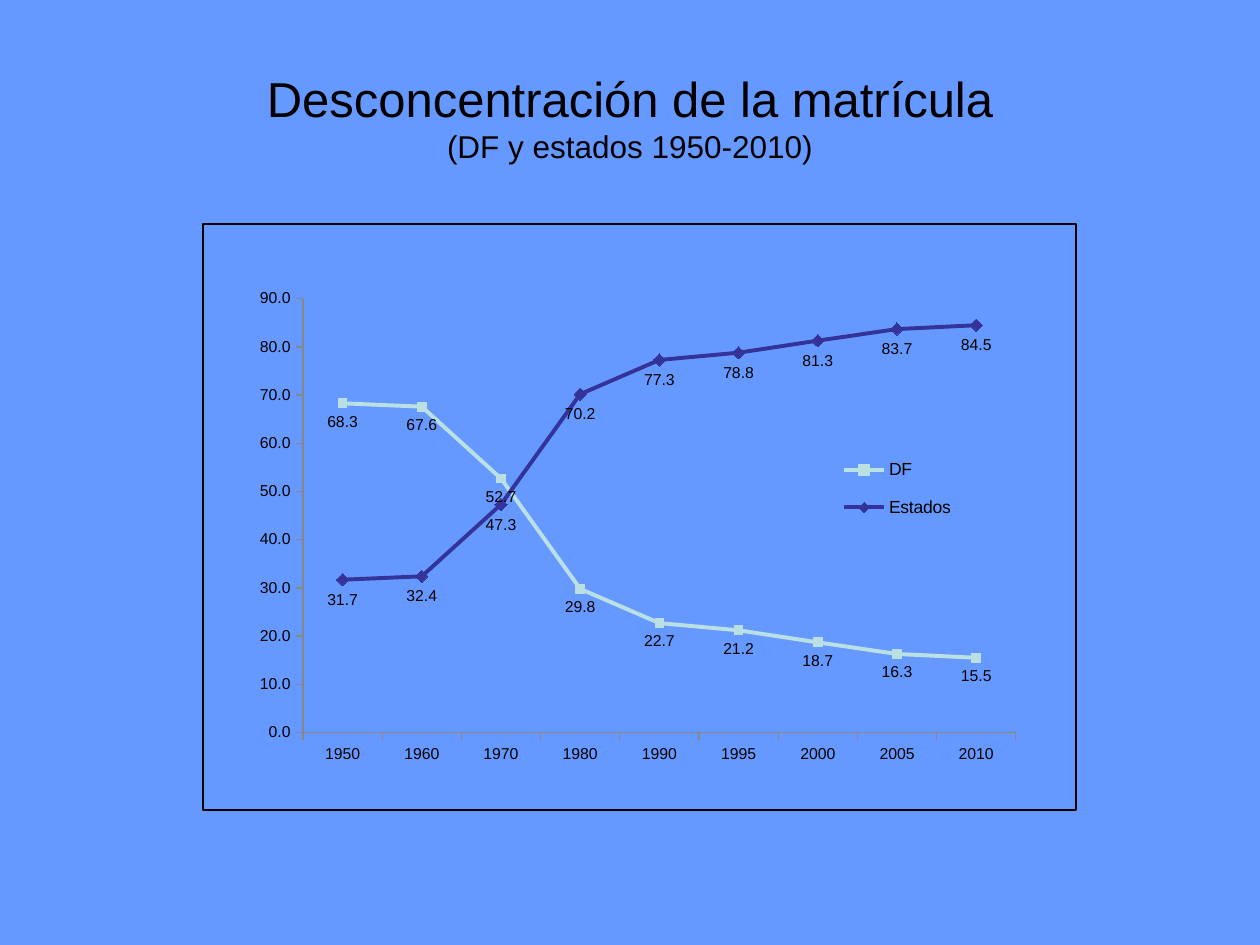
from dataclasses import dataclass
from typing import Any

from lxml import etree
from pptx import Presentation
from pptx import util as u
from pptx.chart import data as chart_data
from pptx.dml import color
from pptx.enum import chart as ch
from pptx.enum import shapes, text
from pptx.oxml import ns


@dataclass(frozen=True)
class Theme:
    background: str = "6699FF"
    ink: str = "000000"
    axis: str = "878787"
    font: str = "Arial"
    title: float = 28
    subtitle: float = 18
    legend: float = 10
    label: float = 9


@dataclass(frozen=True)
class Box:
    left: float
    top: float
    width: float
    height: float

    def lengths(self) -> list[u.Length]:
        return [u.Inches(v) for v in (self.left, self.top, self.width, self.height)]


@dataclass(frozen=True)
class Enrolment:
    name: str
    values: tuple[float, ...]
    color: str
    marker: Any
    marker_size: int


THEME = Theme()
TITLE_BOX = Box(0.5, 0.3, 9, 1.25)
FRAME_BOX = Box(1.61, 1.78, 6.93, 4.65)
CHART_BOX = Box(1.77, 1.62, 6.61, 4.61)
PLOT_AREA = Box(0.096, 0.163, 0.856, 0.747)
LEGEND_AREA = Box(0.72, 0.41, 0.18, 0.16)
YEARS = ("1950", "1960", "1970", "1980", "1990", "1995", "2000", "2005", "2010")
ENROLMENTS = (
    Enrolment("DF", (68.3, 67.6, 52.7, 29.8, 22.7, 21.2, 18.7, 16.3, 15.5),
              "BBE0E3", ch.XL_MARKER_STYLE.SQUARE, 5),
    Enrolment("Estados", (31.7, 32.4, 47.3, 70.2, 77.3, 78.8, 81.3, 83.7, 84.5),
              "333399", ch.XL_MARKER_STYLE.DIAMOND, 7),
)


def rgb(value: str) -> color.RGBColor:
    return color.RGBColor.from_string(value)


def apply_format(target: Any, values: dict[str, Any]) -> None:
    for name, value in values.items():
        setattr(target, name, value)


def style_font(font: Any, size: float) -> None:
    apply_format(font, {"name": THEME.font, "size": u.Pt(size), "bold": False})
    font.color.rgb = rgb(THEME.ink)


def style_fill(fill: Any, value: str) -> None:
    fill.solid()
    fill.fore_color.rgb = rgb(value)


def style_line(line: Any, value: str, width: float) -> None:
    style_fill(line.fill, value)
    line.width = u.Pt(width)


def add_title(slide: Any) -> None:
    frame = slide.shapes.add_textbox(*TITLE_BOX.lengths()).text_frame
    apply_format(frame, {"word_wrap": True, "vertical_anchor": text.MSO_ANCHOR.MIDDLE})
    paragraph = frame.paragraphs[0]
    paragraph.alignment = text.PP_ALIGN.CENTER
    heading = paragraph.add_run()
    heading.text = "Desconcentración de la matrícula"
    style_font(heading.font, THEME.title)
    paragraph.add_line_break()
    period = paragraph.add_run()
    period.text = "(DF y estados 1950-2010)"
    style_font(period.font, THEME.subtitle)


def add_frame(slide: Any) -> None:
    frame = slide.shapes.add_shape(shapes.MSO_SHAPE.RECTANGLE, *FRAME_BOX.lengths())
    frame.shadow.inherit = False
    frame.fill.background()
    style_line(frame.line, THEME.ink, 1)


def set_layout(element: Any, area: Box, inner: bool = False) -> None:
    layout = element.find(ns.qn("c:layout"))
    if layout is None:
        layout = etree.Element(ns.qn("c:layout"))
        element.insert(0 if inner else 1, layout)
    manual = etree.SubElement(layout, ns.qn("c:manualLayout"))
    settings = {"layoutTarget": "inner"} if inner else {}
    settings |= {"xMode": "edge", "yMode": "edge", "x": area.left, "y": area.top,
                 "w": area.width, "h": area.height}
    for name, value in settings.items():
        etree.SubElement(manual, ns.qn(f"c:{name}")).set("val", str(value))


def style_axis(axis: Any) -> None:
    apply_format(axis, {"has_major_gridlines": False,
                        "major_tick_mark": ch.XL_TICK_MARK.OUTSIDE,
                        "minor_tick_mark": ch.XL_TICK_MARK.NONE})
    style_line(axis.format.line, THEME.axis, 0.75)
    style_font(axis.tick_labels.font, THEME.label)


def style_series(series: Any, enrolment: Enrolment) -> None:
    series.smooth = False
    style_line(series.format.line, enrolment.color, 2.25)
    apply_format(series.marker, {"style": enrolment.marker, "size": enrolment.marker_size})
    style_fill(series.marker.format.fill, enrolment.color)
    style_line(series.marker.format.line, enrolment.color, 0.75)
    labels = series.data_labels
    apply_format(labels, {"show_value": True, "position": ch.XL_LABEL_POSITION.BELOW,
                          "number_format": "#,##0.0", "number_format_is_linked": False})
    style_font(labels.font, THEME.label)


def add_enrolment_chart(slide: Any) -> None:
    data = chart_data.CategoryChartData(number_format="#,##0.0")
    data.categories = YEARS
    for enrolment in ENROLMENTS:
        data.add_series(enrolment.name, enrolment.values)
    chart = slide.shapes.add_chart(
        ch.XL_CHART_TYPE.LINE_MARKERS, *CHART_BOX.lengths(), data).chart
    apply_format(chart, {"has_title": False, "has_legend": True})
    style_font(chart.font, THEME.legend)
    apply_format(chart.legend, {"position": ch.XL_LEGEND_POSITION.RIGHT,
                                "include_in_layout": False})
    style_font(chart.legend.font, THEME.legend)
    for axis in (chart.category_axis, chart.value_axis):
        style_axis(axis)
    apply_format(chart.value_axis, {"minimum_scale": 0, "maximum_scale": 90, "major_unit": 10})
    apply_format(chart.value_axis.tick_labels,
                 {"number_format": "#,##0.0", "number_format_is_linked": False})
    plot = chart.plots[0]
    plot.vary_by_categories = False
    for series, enrolment in zip(plot.series, ENROLMENTS):
        style_series(series, enrolment)
    root = chart.element
    set_layout(root.find(f".//{ns.qn('c:plotArea')}"), PLOT_AREA, inner=True)
    set_layout(root.find(f".//{ns.qn('c:legend')}"), LEGEND_AREA)


def main() -> None:
    presentation = Presentation()
    apply_format(presentation, {"slide_width": u.Inches(10), "slide_height": u.Inches(7.5)})
    slide = presentation.slides.add_slide(presentation.slide_layouts[6])
    style_fill(slide.background.fill, THEME.background)
    add_frame(slide)
    add_title(slide)
    add_enrolment_chart(slide)
    presentation.save("out.pptx")


if __name__ == "__main__":
    main()
